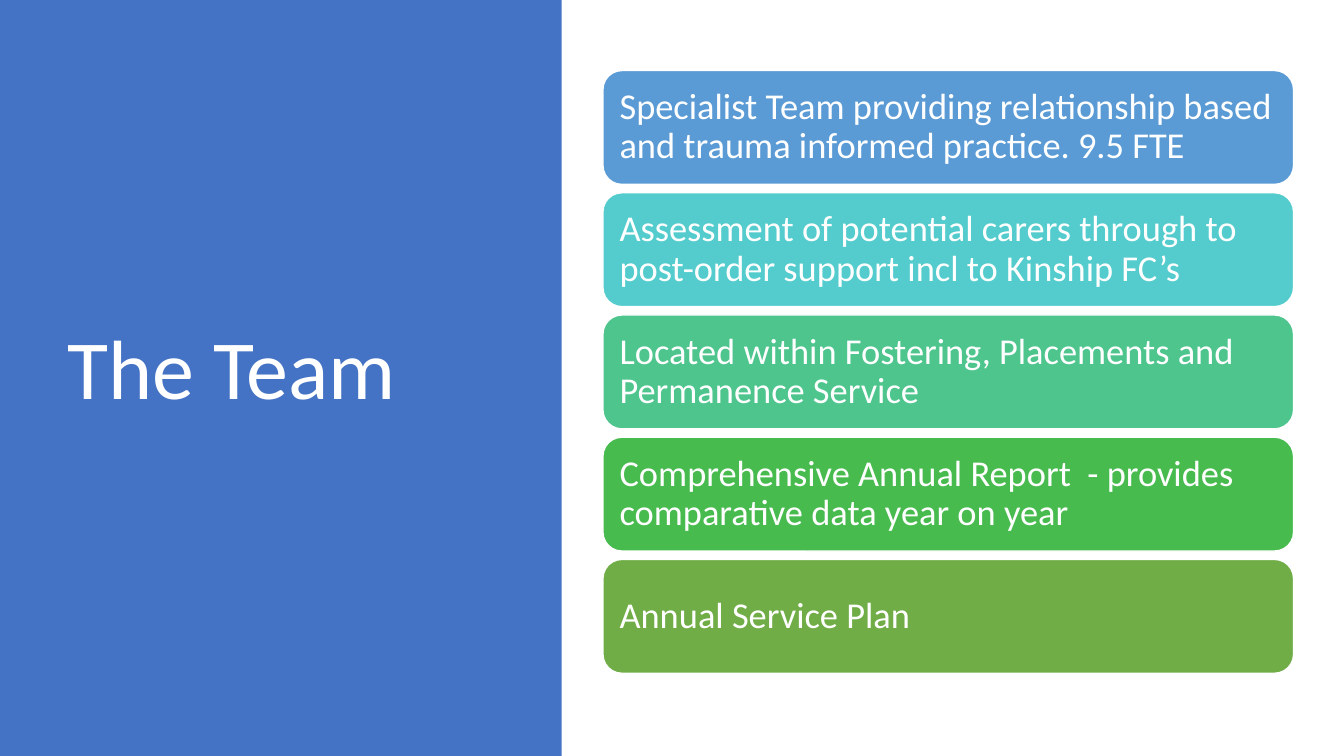
from pptx import Presentation
from pptx.dml.color import RGBColor
from pptx.enum.shapes import MSO_SHAPE
from pptx.enum.text import MSO_ANCHOR, PP_ALIGN
from pptx.util import Inches, Pt

SLIDE_W, SLIDE_H = 13.33, 7.5
PANEL_W = 5.57
CARD_LEFT, CARD_W, CARD_H = 5.98, 6.85, 1.13
STACK_TOP, STACK_BOTTOM = 0.7, 6.68

COLORS = {
    "panel": "4472C4",
    "white": "FFFFFF",
    "blue": "5B9BD5",
    "turquoise": "54CCCD",
    "mint": "4DC58D",
    "green": "48BB4F",
    "olive": "70AD47",
}

CARDS = [
    ("blue", "Specialist Team providing relationship based and trauma informed practice. 9.5 FTE"),
    ("turquoise", "Assessment of potential carers through to post-order support incl to Kinship FC’s"),
    ("mint", "Located within Fostering, Placements and Permanence Service"),
    ("green", "Comprehensive Annual Report  - provides comparative data year on year"),
    ("olive", "Annual Service Plan"),
]


def color(name):
    return RGBColor.from_string(COLORS[name])


def add_block(s, kind, box, fill):
    sp = s.shapes.add_shape(kind, *map(Inches, box))
    sp.shadow.inherit = False
    sp.fill.solid()
    sp.fill.fore_color.rgb = color(fill)
    sp.line.fill.background()
    return sp


def write(sp, text, size, inset):
    """Put white, left-aligned, vertically centred text in a shape."""
    tf = sp.text_frame
    tf.word_wrap = True
    tf.vertical_anchor = MSO_ANCHOR.MIDDLE
    tf.margin_left = tf.margin_right = Inches(inset)
    tf.margin_top = tf.margin_bottom = Inches(inset)
    p = tf.paragraphs[0]
    p.text = text
    p.alignment = PP_ALIGN.LEFT
    p.line_spacing = 0.9
    font = p.runs[0].font
    font.name = "Calibri"
    font.size = Pt(size)
    font.color.rgb = color("white")


def add_title(s, text):
    sp = s.shapes.add_textbox(Inches(0.57), Inches(0.68), Inches(4.16), Inches(6.02))
    write(sp, text, 60, 0.1)


def add_card_stack(s, cards):
    """Spread the cards evenly between the top and bottom of the stack."""
    pitch = (STACK_BOTTOM - STACK_TOP - CARD_H) / (len(cards) - 1)
    for i, (fill, text) in enumerate(cards):
        box = (CARD_LEFT, STACK_TOP + i * pitch, CARD_W, CARD_H)
        sp = add_block(s, MSO_SHAPE.ROUNDED_RECTANGLE, box, fill)
        sp.line.color.rgb = color("white")
        sp.line.width = Pt(1)
        write(sp, text, 26, 0.11)


def main():
    prs = Presentation()
    prs.slide_width, prs.slide_height = Inches(SLIDE_W), Inches(SLIDE_H)
    s = prs.slides.add_slide(prs.slide_layouts[6])
    add_block(s, MSO_SHAPE.RECTANGLE, (0, 0, PANEL_W, SLIDE_H), "panel")
    add_title(s, "The Team")
    add_card_stack(s, CARDS)
    prs.save("out.pptx")


if __name__ == "__main__":
    main()
